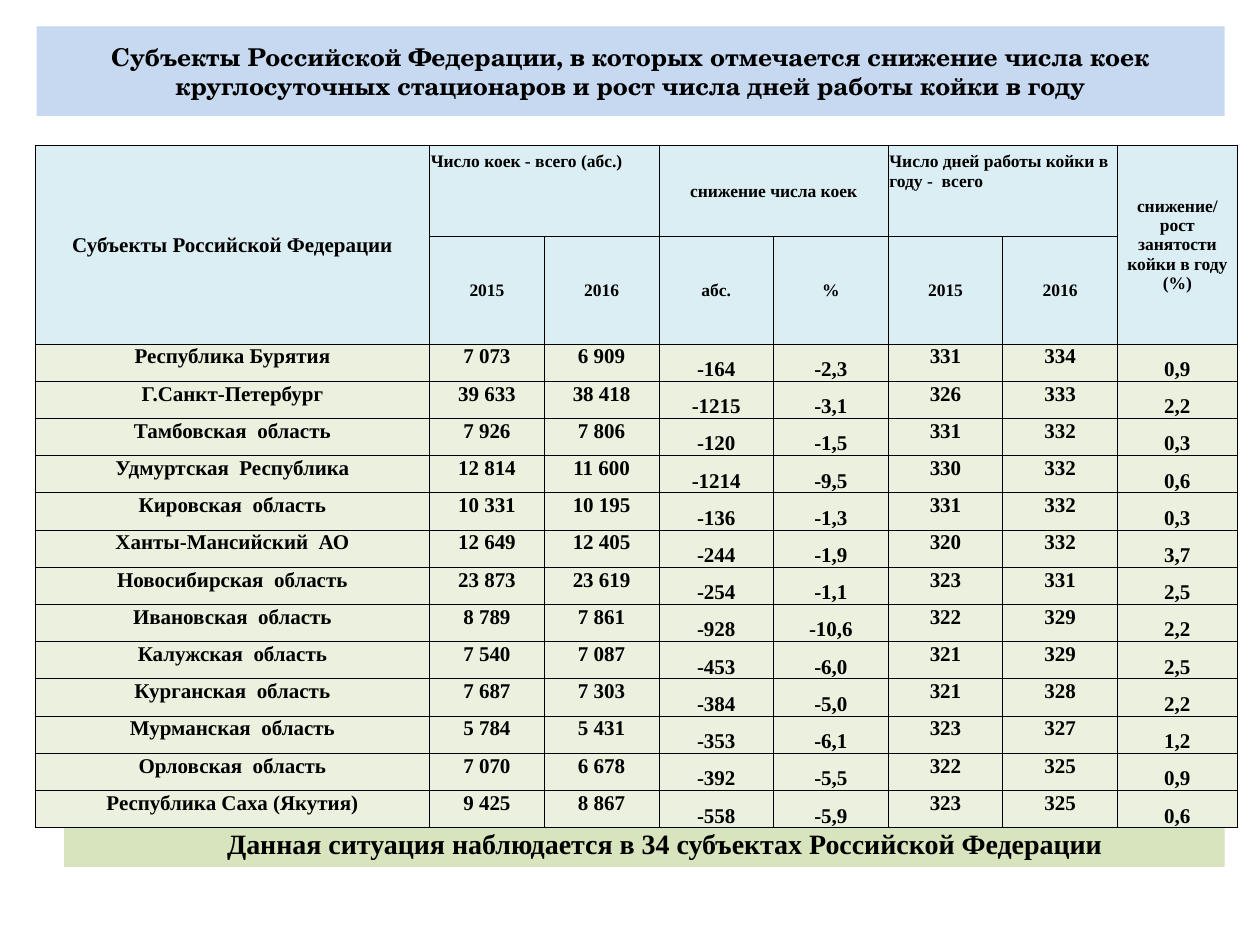
from lxml.etree import SubElement as Sub
from pptx import Presentation
from pptx.dml.color import RGBColor as Rgb
from pptx.enum.shapes import MSO_SHAPE as Kind
from pptx.enum.text import MSO_ANCHOR as Anchor, PP_ALIGN as Align
from pptx.oxml.ns import qn
from pptx.util import Inches, Pt

WIDE, HIGH = Inches(10), Inches(7.5)
SERIF = "Times New Roman"
HUES = {
    "ink": "000000",
    "title": "C6D9F1",
    "note": "D7E4BD",
    "head": "DBEEF4",
    "body": "EBF1DE",
}

TITLE = ("Субъекты Российской Федерации, в которых отмечается снижение числа коек "
         "круглосуточных стационаров и рост числа дней работы койки в году")
NOTE = "Данная ситуация наблюдается в 34 субъектах Российской Федерации"

# Header cells: row, column, rows spanned, columns spanned, text
HEADS = [
    (0, 0, 2, 1, "Субъекты Российской Федерации"),
    (0, 1, 1, 2, "Число коек - всего (абс.)"),
    (0, 3, 1, 2, "снижение числа коек"),
    (0, 5, 1, 2, "Число дней работы койки в году -  всего"),
    (0, 7, 2, 1, "снижение/ рост занятости койки в году (%)"),
] + [(1, col, 1, 1, text) for col, text in
     enumerate(["2015", "2016", "абс.", "%", "2015", "2016"], 1)]

ROWS = [
    ("Республика Бурятия", "7 073", "6 909", "-164", "-2,3", "331", "334", "0,9"),
    ("Г.Санкт-Петербург", "39 633", "38 418", "-1215", "-3,1", "326", "333", "2,2"),
    ("Тамбовская  область", "7 926", "7 806", "-120", "-1,5", "331", "332", "0,3"),
    ("Удмуртская  Республика", "12 814", "11 600", "-1214", "-9,5", "330", "332", "0,6"),
    ("Кировская  область", "10 331", "10 195", "-136", "-1,3", "331", "332", "0,3"),
    ("Ханты-Мансийский  АО", "12 649", "12 405", "-244", "-1,9", "320", "332", "3,7"),
    ("Новосибирская  область", "23 873", "23 619", "-254", "-1,1", "323", "331", "2,5"),
    ("Ивановская  область", "8 789", "7 861", "-928", "-10,6", "322", "329", "2,2"),
    ("Калужская  область", "7 540", "7 087", "-453", "-6,0", "321", "329", "2,5"),
    ("Курганская  область", "7 687", "7 303", "-384", "-5,0", "321", "328", "2,2"),
    ("Мурманская  область", "5 784", "5 431", "-353", "-6,1", "323", "327", "1,2"),
    ("Орловская  область", "7 070", "6 678", "-392", "-5,5", "322", "325", "0,9"),
    ("Республика Саха (Якутия)", "9 425", "8 867", "-558", "-5,9", "323", "325", "0,6"),
]

# Table grid, in hundredths of the slide's width
COLS = [31.3] + [9.1] * 6 + [9.5]
LINES = [7.3, 8.5] + [38.4 / len(ROWS)] * len(ROWS)
LOW = (3, 4, 7)  # body columns set at the bottom of the cell


def unit(num):
    """A length in hundredths of the slide's width."""
    return round(WIDE * num / 100)


def paint(part, hue):
    part.fill.solid()
    part.fill.fore_color.rgb = Rgb.from_string(HUES[hue])


def write(frame, text, size, face=SERIF, align=Align.CENTER):
    frame.word_wrap = True
    para = frame.paragraphs[0]
    para.text = text
    para.alignment = align
    font = para.font
    font.size, font.name, font.bold = Pt(size), face, True
    font.color.rgb = Rgb.from_string(HUES["ink"])


def band(slide, place, hue, text, size, face=SERIF, inset=1):
    """A plain filled strip with one centred text."""
    shape = slide.shapes.add_shape(Kind.RECTANGLE, *map(unit, place))
    shape.shadow.inherit = False
    shape.line.fill.background()
    paint(shape, hue)
    frame = shape.text_frame
    frame.vertical_anchor = Anchor.MIDDLE
    frame.margin_left = unit(inset)
    write(frame, text, size, face)


def edge(cell):
    """Thin lines on all four sides; they must come before the fill."""
    props = cell._tc.get_or_add_tcPr()
    for spot, side in enumerate("LRTB"):
        line = Sub(props, qn(f"a:ln{side}"), w=str(Pt(0.5)))
        Sub(Sub(line, qn("a:solidFill")), qn("a:srgbClr"), val=HUES["ink"])
        props.insert(spot, line)


def fill(cell, text, size, anchor, align=Align.CENTER, top=0.1):
    cell.margin_left = cell.margin_right = unit(0.1)
    cell.margin_top, cell.margin_bottom = unit(top), 0
    cell.vertical_anchor = anchor
    write(cell.text_frame, text, size, align=align)


def grid(slide):
    shape = slide.shapes.add_table(
        len(LINES), len(COLS),
        *map(unit, (2.8, 11.5, sum(COLS), sum(LINES))))
    table = shape.table
    table.first_row = table.horz_banding = False
    for col, size in zip(table.columns, COLS):
        col.width = unit(size)
    for row, size in zip(table.rows, LINES):
        row.height = unit(size)

    # Fill and lines of every cell
    for num, row in enumerate(table.rows):
        for cell in row.cells:
            paint(cell, "head" if num < 2 else "body")
            edge(cell)

    # Header: the two totals start at the top left
    for row, col, down, wide, text in HEADS:
        cell = table.cell(row, col)
        if down * wide > 1:
            cell.merge(table.cell(row + down - 1, col + wide - 1))
        size = 10 if col else 12
        if row == 0 and col in (1, 5):
            fill(cell, text, size, Anchor.TOP, Align.LEFT, top=0.6)
        else:
            fill(cell, text, size, Anchor.MIDDLE)

    # Body
    for row, texts in enumerate(ROWS, 2):
        for col, text in enumerate(texts):
            anchor = Anchor.BOTTOM if col in LOW else Anchor.TOP
            fill(table.cell(row, col), text, 12, anchor)


def main():
    deck = Presentation()
    deck.slide_width, deck.slide_height = WIDE, HIGH
    slide = deck.slides.add_slide(deck.slide_layouts[6])
    band(slide, (2.9, 2.1, 94.3, 7.1), "title", TITLE, 14, "TeX Gyre Schola")
    band(slide, (5.1, 65.1, 92.1, 3.7), "note", NOTE, 16, inset=4.2)
    grid(slide)
    deck.save("out.pptx")


if __name__ == "__main__":
    main()
